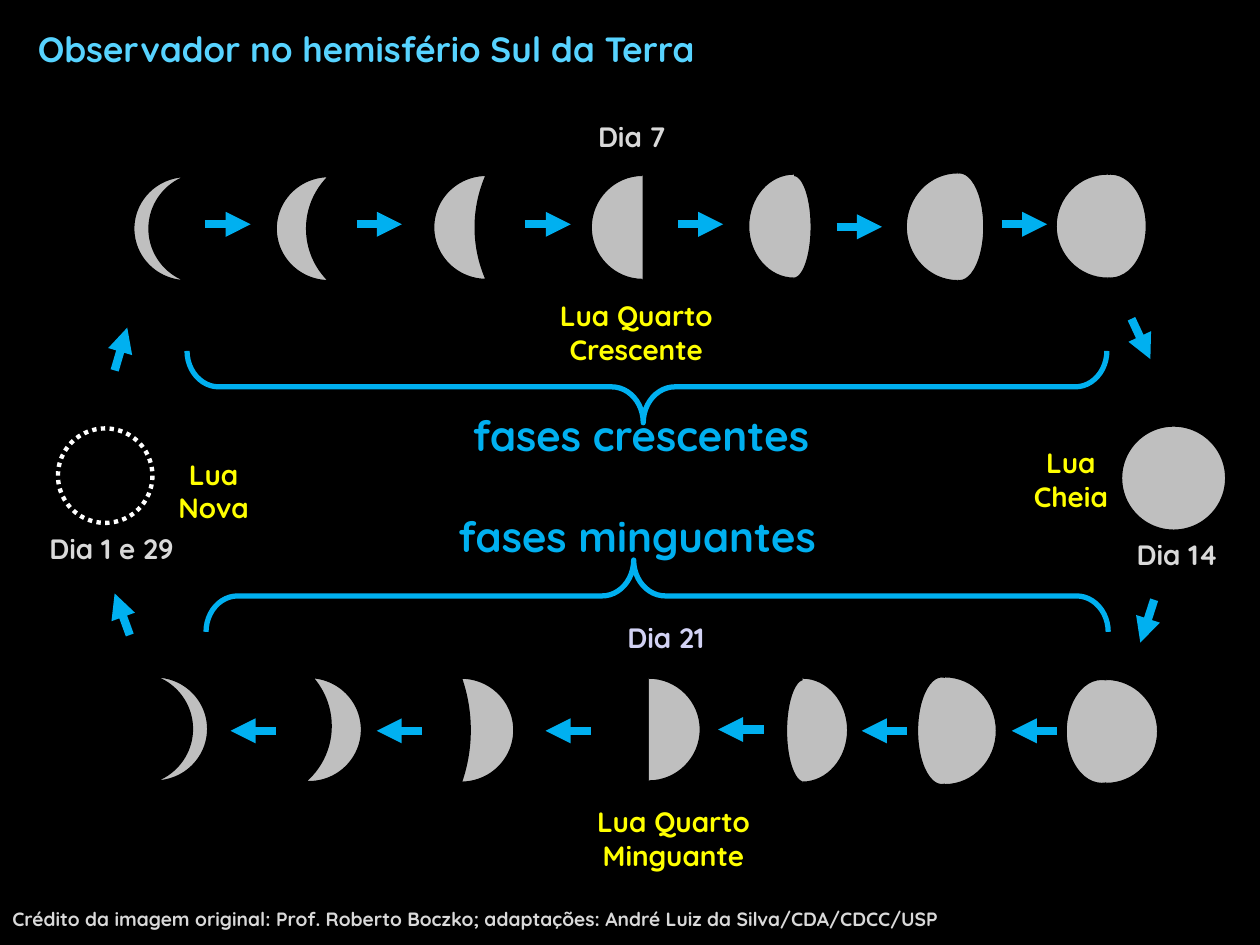
from copy import deepcopy
from dataclasses import dataclass

from lxml.etree import SubElement
from pptx import Presentation
from pptx.dml.color import RGBColor
from pptx.enum.dml import MSO_LINE
from pptx.enum.shapes import MSO_CONNECTOR as Connector
from pptx.enum.shapes import MSO_SHAPE as Preset
from pptx.enum.text import MSO_ANCHOR as Anchor
from pptx.enum.text import MSO_AUTO_SIZE as AutoSize
from pptx.enum.text import PP_ALIGN as Align
from pptx.oxml.ns import qn
from pptx.util import Inches, Pt

COLUMNS = 100
SLIDE_WIDTH, SLIDE_HEIGHT = Inches(10), Inches(7.5)
CELL = SLIDE_WIDTH / COLUMNS
FONT = "Quicksand"
BLACK, WHITE, MOON = "000000", "FFFFFF", "BFBFBF"
BLUE, TITLE_BLUE = "00B0F0", "57D3FF"
YELLOW, GREY, LILAC = "FFFF00", "D9D9D9", "D2D2F4"
ARC_HANDLE = 0.55
ARROW_LENGTH = 3.6


@dataclass(frozen=True)
class Box:
    column: float
    row: float
    columns: float
    rows: float

    def emu(self) -> tuple[int, ...]:
        return tuple(grid(n) for n in (self.column, self.row, self.columns, self.rows))


@dataclass(frozen=True)
class Label:
    box: Box
    lines: tuple[str, ...]
    color: str
    size: float = 16
    align: Align = Align.CENTER
    wrap: bool = True


@dataclass(frozen=True)
class Crescent:
    box: Box
    thickness: float
    rotation: float = 0


@dataclass(frozen=True)
class HalfDisc:
    box: Box
    bulge: int


@dataclass(frozen=True)
class Gibbous:
    ellipse: Box
    half: HalfDisc


@dataclass(frozen=True)
class Brace:
    box: Box
    rotation: float
    point: float


@dataclass(frozen=True)
class Arrow:
    start: tuple[float, float]
    end: tuple[float, float]


TITLE = Label(Box(2, 1.7, 58.8, 4.4), ("Observador no hemisfério Sul da Terra",),
              TITLE_BLUE, 20, Align.LEFT)
LABELS = (
    Label(Box(2, 41.7, 13.7, 3.7), ("Dia 1 e 29",), GREY),
    Label(Box(13, 35.8, 7.9, 6.4), ("Lua", "Nova"), YELLOW, wrap=False),
    Label(Box(43.8, 9, 12.7, 3.7), ("Dia 7",), GREY),
    Label(Box(38.2, 23.2, 24.6, 6.4), ("Lua Quarto Crescente",), YELLOW),
    Label(Box(88.9, 42.2, 9.1, 3.7), ("Dia 14",), GREY),
    Label(Box(80.7, 34.9, 8.6, 6.4), ("Lua", "Cheia"), YELLOW, wrap=False),
    Label(Box(47.8, 48.8, 10.1, 3.7), ("Dia 21",), LILAC),
    Label(Box(46.1, 63.4, 14.7, 6.4), ("Lua Quarto", "Minguante"), YELLOW, wrap=False),
    Label(Box(33.6, 32, 34.5, 5), ("fases crescentes",), BLUE, 24),
    Label(Box(30.6, 40, 39.9, 5), ("fases minguantes",), BLUE, 24),
    Label(Box(0, 71.5, 87.9, 2.9),
          ("Crédito da imagem original: Prof. Roberto Boczko; "
           "adaptações: André Luiz da Silva/CDA/CDCC/USP",), GREY, 11, Align.LEFT),
)
CRESCENTS = (
    Crescent(Box(10.6, 14, 4.2, 8.3), 0.296),
    Crescent(Box(21.9, 14, 4.2, 8.3), 0.583),
    Crescent(Box(34.4, 13.9, 4.2, 8.3), 0.792),
    Crescent(Box(12.3, 53.7, 4.2, 8.3), 0.296, 180),
    Crescent(Box(24.5, 53.9, 4.2, 8.3), 0.583, 184),
    Crescent(Box(36.6, 53.8, 4.2, 8.3), 0.833, 180),
)
QUARTERS = (
    HalfDisc(Box(46.9, 13.9, 4.1, 8.3), -1),
    HalfDisc(Box(51.5, 53.8, 4.1, 8.2), 1),
)
GIBBOUS = (
    Gibbous(Box(61.6, 13.9, 2.8, 8.2), HalfDisc(Box(59.4, 13.8, 3.6, 8.3), -1)),
    Gibbous(Box(74.2, 13.7, 3.9, 8.6), HalfDisc(Box(71.9, 13.7, 4.1, 8.6), -1)),
    Gibbous(Box(85.3, 13.8, 5.7, 8.3), HalfDisc(Box(83.8, 13.8, 4.1, 8.3), -1)),
    Gibbous(Box(62.4, 53.9, 2.8, 8.2), HalfDisc(Box(63.7, 53.8, 3.6, 8.3), 1)),
    Gibbous(Box(72.8, 53.7, 3.9, 8.6), HalfDisc(Box(75, 53.7, 4.1, 8.6), 1)),
    Gibbous(Box(84.6, 53.9, 5.7, 8.3), HalfDisc(Box(87.8, 53.9, 4.1, 8.3), 1)),
)
BRACES = (
    Brace(Box(48.5, -5.8, 5.7, 73), 270, 0.496),
    Brace(Box(49.3, 11.5, 5.7, 71.6), 90, 0.526),
)
WAXING_STARTS = ((16.3, 17.8), (28.3, 17.8), (41.7, 17.8), (53.8, 17.8), (66.4, 18), (79.5, 17.8))
WANING_STARTS = ((21.9, 58), (33.5, 58), (46.9, 58), (60.6, 57.9), (72, 58), (83.9, 58))
ARROWS = (
    *(Arrow((x, y), (x + ARROW_LENGTH, y)) for x, y in WAXING_STARTS),
    *(Arrow((x, y), (x - ARROW_LENGTH, y)) for x, y in WANING_STARTS),
    Arrow((9.1, 29.4), (10.1, 26)),
    Arrow((10.3, 50.4), (9.1, 47.1)),
    Arrow((89.8, 25.3), (91.3, 28.5)),
    Arrow((91.6, 47.6), (90.5, 51)),
)


def grid(cells: float) -> int:
    return round(cells * CELL)


def rgb(color: str) -> RGBColor:
    return RGBColor.from_string(color)


def paint(shape, fill: str | None, line: str, width: float = 1) -> None:
    shape.shadow.inherit = False
    if fill:
        shape.fill.solid()
        shape.fill.fore_color.rgb = rgb(fill)
    else:
        shape.fill.background()
    shape.line.color.rgb = rgb(line)
    shape.line.width = Pt(width)


def write(shape, label: Label) -> None:
    frame = shape.text_frame
    frame.word_wrap = label.wrap
    frame.auto_size = AutoSize.SHAPE_TO_FIT_TEXT
    frame.vertical_anchor = Anchor.TOP
    for index, line in enumerate(label.lines):
        paragraph = frame.add_paragraph() if index else frame.paragraphs[0]
        paragraph.alignment = label.align
        run = paragraph.add_run()
        run.text = line
        run.font.name, run.font.size, run.font.bold = FONT, Pt(label.size), True
        run.font.color.rgb = rgb(label.color)


def draw_disc(slide, box: Box, fill: str = MOON, line: str = BLACK, width: float = 1):
    shape = slide.shapes.add_shape(Preset.OVAL, *box.emu())
    paint(shape, fill, line, width)
    return shape


def draw_crescent(slide, crescent: Crescent) -> None:
    shape = slide.shapes.add_shape(Preset.MOON, *crescent.box.emu())
    shape.adjustments[0] = crescent.thickness
    shape.rotation = crescent.rotation
    paint(shape, MOON, BLACK)


def bend(segment, points: tuple[tuple[float, float], ...]) -> None:
    segment.tag = qn("a:cubicBezTo")
    segment.clear()
    for x, y in points:
        SubElement(segment, qn("a:pt"), x=str(round(x)), y=str(round(y)))


def draw_half(slide, half: HalfDisc) -> None:
    left, top, width, height = half.box.emu()
    flat, rim = (0, width) if half.bulge > 0 else (width, 0)
    middle = height / 2
    handle_x = flat + (rim - flat) * ARC_HANDLE
    handle_y = middle * ARC_HANDLE
    builder = slide.shapes.build_freeform(left + flat, top)
    builder.add_line_segments([(left + rim, top + round(middle)), (left + flat, top + height),
                               (left + flat, top + round(middle))], close=True)
    shape = builder.convert_to_shape()
    filled = next(shape._element.iter(qn("a:path")))
    upper, lower, _ = filled.findall(qn("a:lnTo"))
    for segment, points in (
        (upper, ((handle_x, 0), (rim, middle - handle_y), (rim, middle))),
        (lower, ((rim, middle + handle_y), (handle_x, height), (flat, height))),
    ):
        replacement = SubElement(filled, qn("a:cubicBezTo"))
        filled.replace(segment, replacement)
        bend(replacement, points)
    outline = deepcopy(filled)
    for tag in ("a:lnTo", "a:close"):
        outline.remove(outline.find(qn(tag)))
    outline.set("fill", "none")
    filled.set("stroke", "0")
    filled.addprevious(outline)
    paint(shape, MOON, BLACK)


def draw_brace(slide, brace: Brace) -> None:
    shape = slide.shapes.add_shape(Preset.LEFT_BRACE, *brace.box.emu())
    shape.adjustments[0], shape.adjustments[1] = 0.441, brace.point
    shape.rotation = brace.rotation
    paint(shape, None, BLUE, 3)


def draw_arrow(slide, arrow: Arrow) -> None:
    ends = (grid(cells) for cells in (*arrow.start, *arrow.end))
    connector = slide.shapes.add_connector(Connector.STRAIGHT, *ends)
    connector.line.color.rgb = rgb(BLUE)
    connector.line.width = Pt(4.75)
    SubElement(connector.line._get_or_add_ln(), qn("a:tailEnd"), type="triangle")
    SubElement(connector._element.spPr, qn("a:effectLst"))


def main() -> None:
    presentation = Presentation()
    presentation.slide_width, presentation.slide_height = SLIDE_WIDTH, SLIDE_HEIGHT
    slide = presentation.slides.add_slide(presentation.slide_layouts[5])
    slide.background.fill.solid()
    slide.background.fill.fore_color.rgb = rgb(BLACK)
    title = slide.shapes.title
    title.left, title.top, title.width, title.height = TITLE.box.emu()
    write(title, TITLE)
    new_moon = draw_disc(slide, Box(4.6, 34, 7.5, 7.5), BLACK, WHITE, 2.5)
    new_moon.line.dash_style = MSO_LINE.ROUND_DOT
    draw_disc(slide, Box(89, 33.8, 8.3, 8.3))
    for draw, items in ((draw_crescent, CRESCENTS), (draw_half, QUARTERS)):
        for item in items:
            draw(slide, item)
    for gibbous in GIBBOUS:
        draw_disc(slide, gibbous.ellipse)
        draw_half(slide, gibbous.half)
    for label in LABELS:
        write(slide.shapes.add_textbox(*label.box.emu()), label)
    for draw, items in ((draw_brace, BRACES), (draw_arrow, ARROWS)):
        for item in items:
            draw(slide, item)
    presentation.save("out.pptx")


if __name__ == "__main__":
    main()
